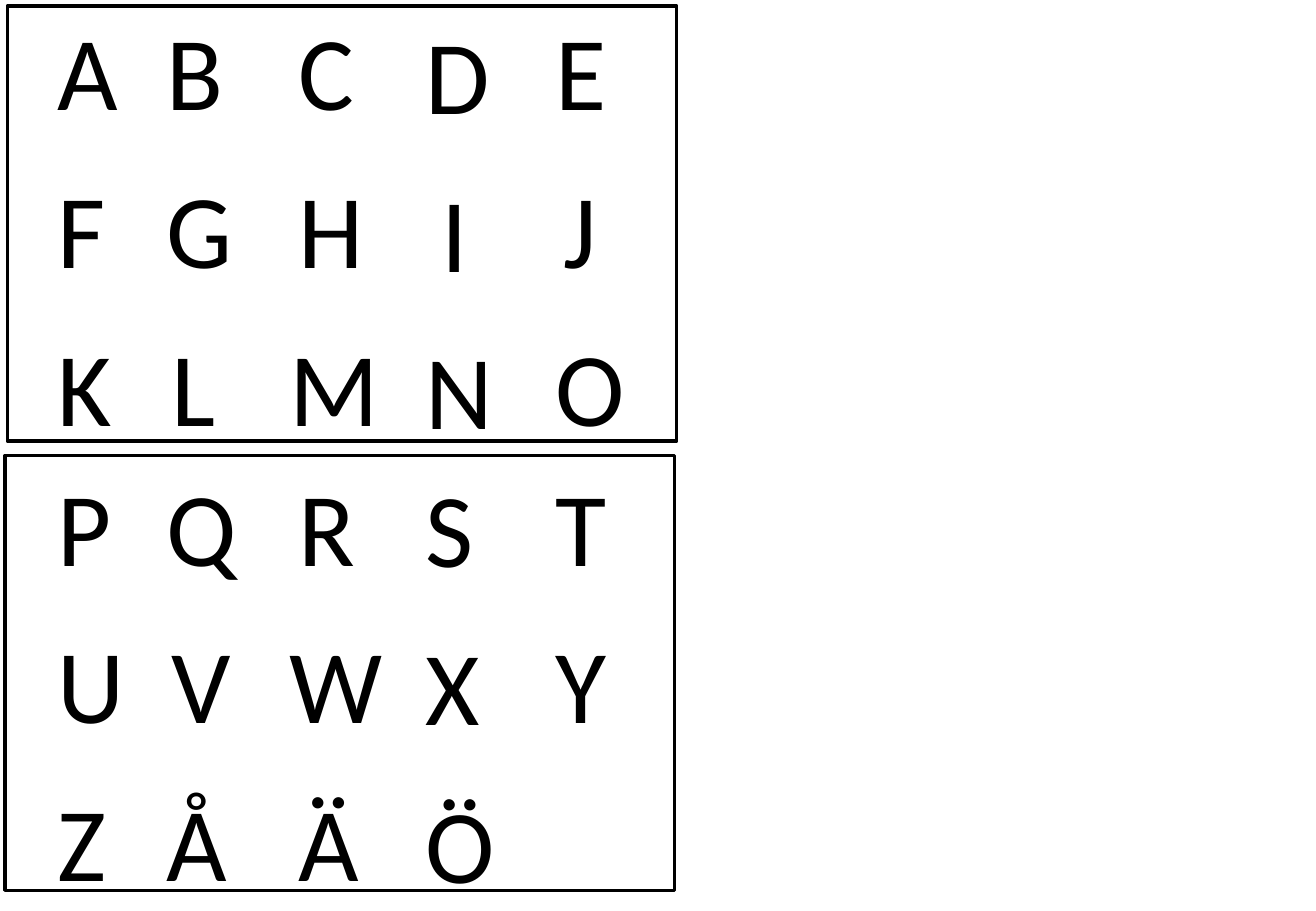
from pptx import Presentation
from pptx.dml.color import RGBColor
from pptx.enum.shapes import MSO_SHAPE
from pptx.enum.text import MSO_AUTO_SIZE
from pptx.util import Inches, Pt

RECTANGLE = MSO_SHAPE.RECTANGLE
GROW_TO_TEXT = MSO_AUTO_SIZE.SHAPE_TO_FIT_TEXT

COLORS = {"ink": "000000"}
FONT = "Calibri"

# Letter grid: left and width of each column, in inches
COLUMNS = [(0.38, 0.57), (1.28, 0.76), (2.37, 0.71), (3.41, 0.73), (4.48, 0.72)]
ROW_STEP = 1.3
LETTER_HEIGHT = 1.14
DROPPED_COLUMN = 3

# Sideways shift of letters that are narrower or wider than their column
SHIFTS = {"I": 0.13, "J": 0.07, "L": 0.04, "V": 0.04, "M": -0.08, "W": -0.08}

# Cards: frame position, top of the letters, drop of the fourth column, rows
CARDS = [
    {"frame": (0.04, 3.75), "top": 3.75, "drop": 0.01, "rows": ["PQRST", "UVWXY", "ZÅÄÖ"]},
    {"frame": (0.06, 0.05), "top": 0, "drop": 0.03, "rows": ["ABCDE", "FGHIJ", "KLMNO"]},
]
FRAME_SIZE = (5.51, 3.58)


def add_frame(slide, left, top):
    width, height = FRAME_SIZE
    frame = slide.shapes.add_shape(
        RECTANGLE, Inches(left), Inches(top), Inches(width), Inches(height))
    frame.shadow.inherit = False
    frame.fill.background()
    frame.line.color.rgb = RGBColor.from_string(COLORS["ink"])
    frame.line.width = Pt(2)


def add_letter(slide, letter, left, top, width):
    box = slide.shapes.add_textbox(
        Inches(left), Inches(top), Inches(width), Inches(LETTER_HEIGHT))
    text_frame = box.text_frame
    text_frame.word_wrap = True
    text_frame.auto_size = GROW_TO_TEXT
    text_frame.margin_left = text_frame.margin_right = Inches(0.09)
    text_frame.margin_top = text_frame.margin_bottom = Inches(0.05)
    run = text_frame.paragraphs[0].add_run()
    run.text = letter
    run.font.name = FONT
    run.font.size = Pt(62)
    run.font.color.rgb = RGBColor.from_string(COLORS["ink"])


def add_letters(slide, card):
    for row, letters in enumerate(card["rows"]):
        for column, letter in enumerate(letters):
            left, width = COLUMNS[column]
            top = card["top"] + row * ROW_STEP
            if column == DROPPED_COLUMN:
                top += card["drop"]
            add_letter(slide, letter, left + SHIFTS.get(letter, 0), top, width)


def main():
    presentation = Presentation()
    presentation.slide_width = Inches(10.83)
    presentation.slide_height = Inches(7.5)
    blank_layout = presentation.slide_layouts[6]
    slide = presentation.slides.add_slide(blank_layout)

    # Frames lie behind all letters
    for card in CARDS:
        add_frame(slide, *card["frame"])

    # Alphabet, upper card first
    for card in reversed(CARDS):
        add_letters(slide, card)

    presentation.save("out.pptx")


if __name__ == "__main__":
    main()
